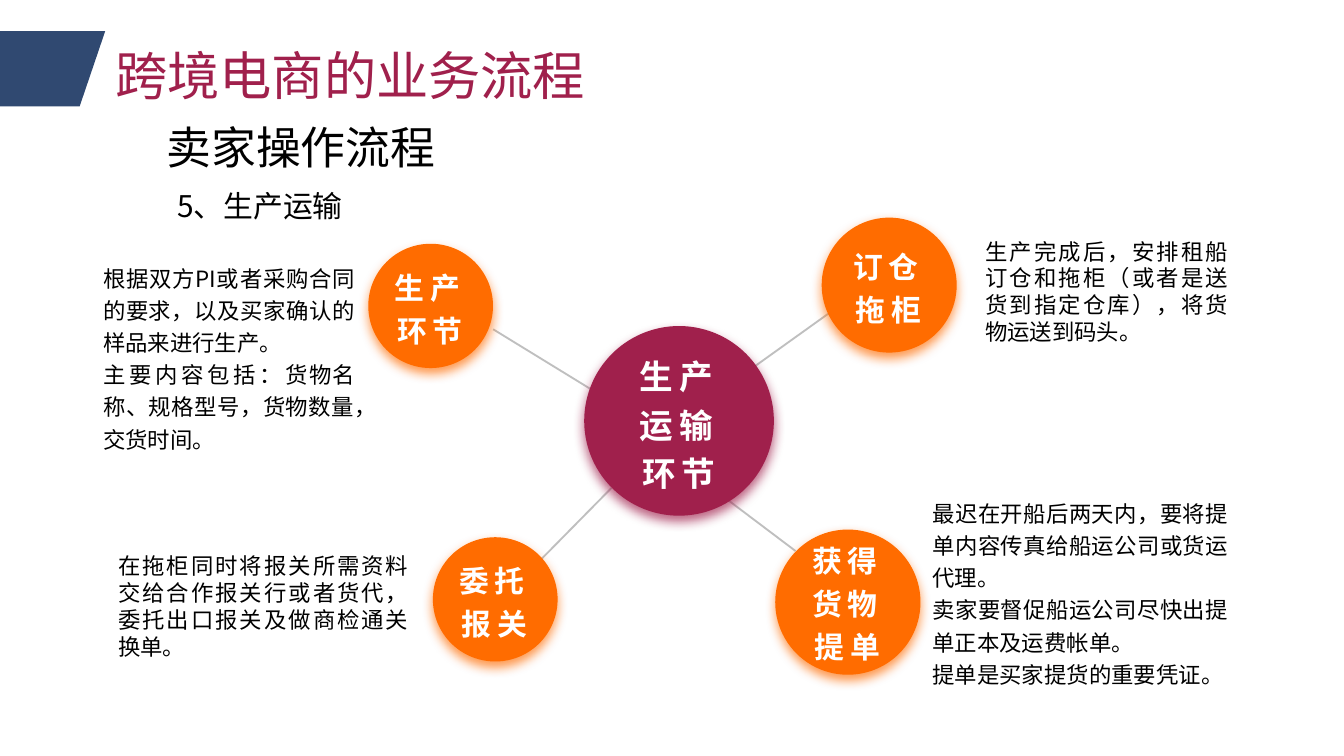
from dataclasses import dataclass
from lxml import etree
from pptx import Presentation
from pptx.dml.color import RGBColor
from pptx.enum.shapes import MSO_CONNECTOR, MSO_SHAPE
from pptx.enum.text import MSO_ANCHOR, MSO_AUTO_SIZE, PP_ALIGN
from pptx.oxml.ns import qn
from pptx.util import Pt

FONT = "Noto Sans CJK SC"
COLORS = {
    "navy": "304971",
    "wine": "A0204C",
    "orange": "FF6C00",
    "gray": "BFBFBF",
    "black": "000000",
    "white": "FFFFFF",
}


@dataclass
class Box:
    left: float
    top: float
    width: float
    height: float

    def lengths(self) -> tuple:
        return Pt(self.left), Pt(self.top), Pt(self.width), Pt(self.height)


@dataclass
class Style:
    size: float
    color: str = "black"
    bold: bool = False
    spacing: float = 0
    align: PP_ALIGN = PP_ALIGN.LEFT
    line_spacing: float = 1.0
    indent: float = 0


@dataclass
class Heading:
    text: str
    box: Box
    style: Style


@dataclass
class Stage:
    name: str
    disc: Box
    label: Box


@dataclass
class Note:
    box: Box
    line_spacing: float
    paragraphs: list[str]


def rgb(name: str) -> RGBColor:
    return RGBColor.from_string(COLORS[name])


def format_run(run, style: Style) -> None:
    font = run.font
    font.size, font.bold, font.name = Pt(style.size), style.bold, FONT
    font.color.rgb = rgb(style.color)
    properties = run._r.get_or_add_rPr()
    etree.SubElement(properties, qn("a:ea")).set("typeface", FONT)
    if style.spacing:
        properties.set("spc", str(round(style.spacing * 100)))


def write(frame, paragraphs: list[str], style: Style) -> None:
    frame.word_wrap = True
    frame.text = "\n".join(paragraphs)
    for paragraph in frame.paragraphs:
        paragraph.alignment = style.align
        paragraph.line_spacing = style.line_spacing
        if style.indent:
            paragraph._p.get_or_add_pPr().set("indent", str(Pt(style.indent)))
        for run in paragraph.runs:
            format_run(run, style)


def center_label(frame, text: str, size: float) -> None:
    frame.margin_left = frame.margin_right = Pt(5)
    frame.margin_top = frame.margin_bottom = Pt(2.9)
    frame.vertical_anchor = MSO_ANCHOR.MIDDLE
    write(frame, [text], Style(size, "white", True, 3, PP_ALIGN.CENTER, 1.2))


def add_heading(slide, heading: Heading) -> None:
    frame = slide.shapes.add_textbox(*heading.box.lengths()).text_frame
    write(frame, [heading.text], heading.style)
    frame.auto_size = MSO_AUTO_SIZE.SHAPE_TO_FIT_TEXT


def add_spoke(slide, x1: float, y1: float, x2: float, y2: float) -> None:
    spoke = slide.shapes.add_connector(
        MSO_CONNECTOR.STRAIGHT, Pt(x1), Pt(y1), Pt(x2), Pt(y2))
    spoke.line.color.rgb = rgb("gray")
    spoke.line.width = Pt(1)
    etree.SubElement(spoke._element.spPr, qn("a:effectLst"))


def add_disc(slide, box: Box, color: str):
    disc = slide.shapes.add_shape(MSO_SHAPE.OVAL, *box.lengths())
    disc.fill.solid()
    disc.fill.fore_color.rgb = rgb(color)
    disc.line.fill.background()
    # Soft glow in the disc's own colour, straight down
    disc.shadow.inherit = False
    effects = disc._element.spPr.find(qn("a:effectLst"))
    shadow = etree.SubElement(
        effects, qn("a:outerShdw"), blurRad=str(Pt(6)), dist=str(Pt(3)),
        dir="5400000", algn="t", rotWithShape="0")
    tint = etree.SubElement(shadow, qn("a:srgbClr"), val=COLORS[color])
    etree.SubElement(tint, qn("a:alpha"), val="70000")
    return disc


def add_note(slide, note: Note):
    frame = slide.shapes.add_textbox(*note.box.lengths()).text_frame
    write(frame, note.paragraphs,
          Style(12, align=PP_ALIGN.JUSTIFY, line_spacing=note.line_spacing))
    return frame


HEADINGS = [
    Heading("5、生产运输", Box(56.2, 91.4, 156.2, 32.4),
            Style(16, line_spacing=1.3, indent=31.7)),
    Heading("跨境电商的业务流程", Box(54.7, 19.4, 324.7, 41), Style(28, "wine")),
    Heading("卖家操作流程", Box(82.1, 60.5, 216.7, 36), Style(24)),
]
SPOKES = [
    (264.2, 176.4, 327.6, 215.3),
    (327.6, 261.4, 280.1, 309.6),
    (373.7, 255.6, 426.2, 295.2),
    (403.9, 196.6, 452.2, 162),
]
STAGES = [
    Stage("订仓拖柜", Box(440.2, 116.6, 72.3, 72.3), Box(448.6, 128.9, 54.7, 46.8)),
    Stage("生产环节", Box(197.3, 130.6, 66.8, 66.6), Box(204.5, 140.4, 51.8, 46.8)),
    Stage("委托报关", Box(231.9, 287.8, 66.8, 66.6), Box(239, 297.4, 51.8, 46.8)),
    Stage("获得货物提单", Box(415.3, 283.7, 77.8, 77.8), Box(429.1, 298.1, 49.7, 46.8)),
]
PRODUCTION_LEAD = "主要内容包括："
PRODUCTION = Note(Box(48.2, 135.4, 149, 126), 1.2, [
    "根据双方PI或者采购合同的要求，以及买家确认的样品来进行生产。", PRODUCTION_LEAD])
NOTES = [
    Note(Box(520.6, 123.8, 144.7, 68.4), 1.0, [
        "生产完成后，安排租船订仓和拖柜（或者是送货到指定仓库），将货物运送到码头。"]),
    Note(Box(492.5, 261.4, 172.8, 123.1), 1.2, [
        "最迟在开船后两天内，要将提单内容传真给船运公司或货运代理。",
        "卖家要督促船运公司尽快出提单正本及运费帐单。",
        "提单是买家提货的重要凭证。"]),
    Note(Box(56.2, 292.3, 169.9, 68.4), 1.0, [
        "在拖柜同时将报关所需资料交给合作报关行或者货代，委托出口报关及做商检通关换单。"]),
]


def main() -> None:
    deck = Presentation()
    deck.slide_width, deck.slide_height = Pt(720), Pt(405)
    slide = deck.slides.add_slide(deck.slide_layouts[6])

    # Slanted title marker
    outline = slide.shapes.build_freeform(Pt(0), Pt(16.6))
    outline.add_line_segments(
        [(Pt(56.4), Pt(16.6)), (Pt(42.7), Pt(57)), (Pt(0), Pt(57))], close=True)
    marker = outline.convert_to_shape()
    marker.fill.solid()
    marker.fill.fore_color.rgb = rgb("navy")
    marker.line.fill.background()
    marker.shadow.inherit = False

    for heading in HEADINGS:
        add_heading(slide, heading)

    # Hub, spokes and stages
    for spoke in SPOKES:
        add_spoke(slide, *spoke)
    for stage in STAGES:
        add_disc(slide, stage.disc, "orange")
    hub = add_disc(slide, Box(313, 174.7, 101.6, 101.6), "wine")
    center_label(hub.text_frame, "生产运输环节", 18)
    for stage in STAGES:
        label = slide.shapes.add_textbox(*stage.label.lengths())
        center_label(label.text_frame, stage.name, 16)

    # Explanations; the production lead-in is widely spaced
    for note in NOTES:
        add_note(slide, note)
    details = add_note(slide, PRODUCTION).paragraphs[-1]
    details.runs[0]._r.get_or_add_rPr().set("spc", "150")
    items = details.add_run()
    items.text = "货物名称、规格型号，货物数量，交货时间。"
    format_run(items, Style(12))

    deck.save("out.pptx")


if __name__ == "__main__":
    main()
